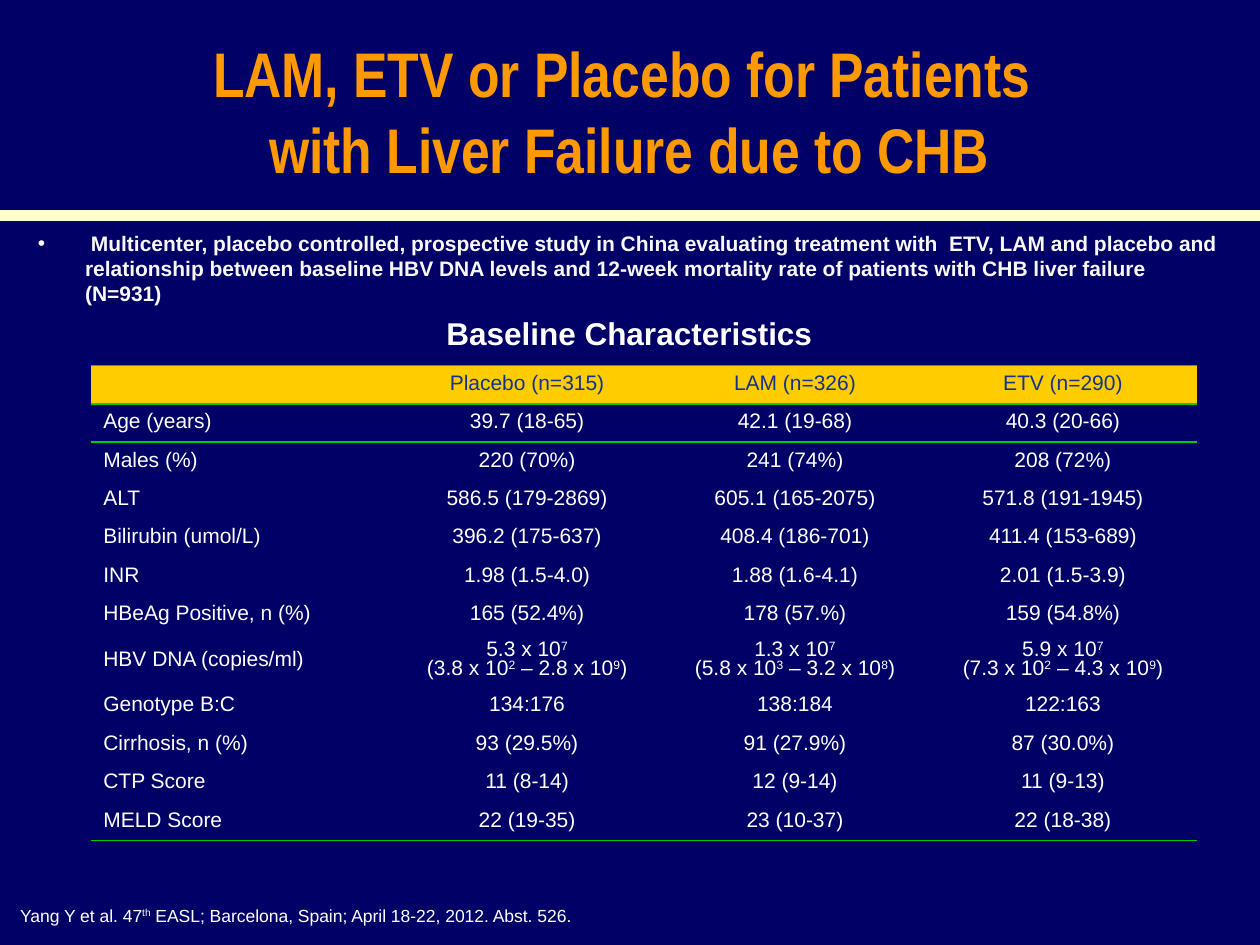
from dataclasses import dataclass

from lxml.etree import SubElement
from pptx import Presentation
from pptx.dml.color import RGBColor as Rgb
from pptx.enum.shapes import MSO_SHAPE as Kind
from pptx.enum.text import MSO_ANCHOR as Anchor, MSO_AUTO_SIZE as Fit, PP_ALIGN as Align
from pptx.oxml import parse_xml
from pptx.oxml.ns import nsdecls, qn
from pptx.util import Inches, Pt


@dataclass(frozen=True)
class Theme:
    back: str = "000066"
    band: str = "FFFFCC"
    title: str = "FF9900"
    body: str = "F8F8F8"
    text: str = "FFFFFF"
    head: str = "16318C"
    gold: str = "FFCC00"
    rule: str = "00CC00"
    font: str = "Arial"
    narrow: str = "Arial Narrow"
    big: int = 36
    mid: int = 18
    small: int = 12
    note: int = 10


@dataclass(frozen=True)
class Box:
    left: float
    top: float
    width: float
    height: float

    def place(self) -> tuple:
        return tuple(Inches(v) for v in (self.left, self.top, self.width, self.height))


@dataclass(frozen=True)
class Row:
    label: str
    cells: tuple
    height: float = 0.305


LOOK = Theme()
ROWS = [
    Row("", ("Placebo (n=315)", "LAM (n=326)", "ETV (n=290)")),
    Row("Age (years)", ("39.7 (18-65)", "42.1 (19-68)", "40.3 (20-66)")),
    Row("Males (%)", ("220 (70%)", "241 (74%)", "208 (72%)")),
    Row("ALT", ("586.5 (179-2869)", "605.1 (165-2075)", "571.8 (191-1945)")),
    Row("Bilirubin (umol/L)", ("396.2 (175-637)", "408.4 (186-701)", "411.4 (153-689)")),
    Row("INR", ("1.98 (1.5-4.0)", "1.88 (1.6-4.1)", "2.01 (1.5-3.9)")),
    Row("HBeAg Positive, n (%)", ("165 (52.4%)", "178 (57.%)", "159 (54.8%)")),
    Row("HBV DNA (copies/ml)", (
        "5.3 x 10^7^\n(3.8 x 10^2^ – 2.8 x 10^9^)",
        "1.3 x 10^7^\n(5.8 x 10^3^ – 3.2 x 10^8^)",
        "5.9 x 10^7^\n(7.3 x 10^2^ – 4.3 x 10^9^)"), 0.42),
    Row("Genotype B:C", ("134:176", "138:184", "122:163")),
    Row("Cirrhosis, n (%)", ("93 (29.5%)", "91 (27.9%)", "87 (30.0%)")),
    Row("CTP Score", ("11 (8-14)", "12 (9-14)", "11 (9-13)")),
    Row("MELD Score", ("22 (19-35)", "23 (10-37)", "22 (18-38)")),
]


def write(frame, text: str, *, size: int = LOOK.small, color: str = LOOK.text,
          font: str = LOOK.font, bold: bool = False, align=None, space=None) -> None:
    for i, line in enumerate(text.split("\n")):
        para = frame.add_paragraph() if i else frame.paragraphs[0]
        para.alignment = align
        para.line_spacing = space
        if not line:
            SubElement(para._p, qn("a:endParaRPr"), sz=str(size * 100))
        for j, part in enumerate(line.split("\v")):
            if j:
                para.add_line_break()
            for k, bit in enumerate(part.split("^")):
                if not bit:
                    continue
                run = para.add_run()
                run.text = bit
                run.font.size = Pt(size)
                run.font.name = font
                run.font.bold = bold
                run.font.color.rgb = Rgb.from_string(color)
                if k % 2:
                    run.font._element.set("baseline", "30000")


def move(shape, box: Box) -> None:
    shape.left, shape.top, shape.width, shape.height = box.place()


def edge(cell, sides: tuple) -> None:
    props = cell._tc.get_or_add_tcPr()
    for i, side in enumerate(sides):
        props.insert(i, parse_xml(
            f'<a:{side} {nsdecls("a")} w="12700"><a:solidFill>'
            f'<a:srgbClr val="{LOOK.rule}"/></a:solidFill></a:{side}>'))


def add_grid(slide, box: Box, rows: list, first: float) -> None:
    cols = 1 + len(rows[0].cells)
    grid = slide.shapes.add_table(len(rows), cols, *box.place()).table
    grid.first_row = grid.horz_banding = False
    style = grid._tbl.tblPr.find(qn("a:tableStyleId"))
    style.text = "{2D5ABB26-0587-4C30-8999-92F81FD0307C}"
    for i, col in enumerate(grid.columns):
        col.width = Inches((box.width - first) / (cols - 1) if i else first)
    for r, row in enumerate(rows):
        grid.rows[r].height = Inches(row.height)
        sides = {0: ("lnT", "lnB"), 1: ("lnT",), len(rows) - 1: ("lnB",)}.get(r, ())
        for c, text in enumerate((row.label, *row.cells)):
            cell = grid.cell(r, c)
            cell.vertical_anchor = Anchor.MIDDLE
            if r:
                cell.fill.background()
            else:
                cell.fill.solid()
                cell.fill.fore_color.rgb = Rgb.from_string(LOOK.gold)
            edge(cell, sides)
            write(cell.text_frame, text, color=LOOK.text if r else LOOK.head,
                  align=Align.CENTER if c else Align.LEFT, space=0.8)


def add_band(slide, box: Box) -> None:
    band = slide.shapes.add_shape(Kind.RECTANGLE, *box.place())
    band.shadow.inherit = False
    band.fill.solid()
    band.fill.fore_color.rgb = band.line.color.rgb = Rgb.from_string(LOOK.band)
    band.line.width = Pt(0.75)


def main() -> None:
    deck = Presentation()
    deck.slide_width, deck.slide_height = Inches(10), Inches(7.5)
    slide = deck.slides.add_slide(deck.slide_layouts[1])
    slide.background.fill.solid()
    slide.background.fill.fore_color.rgb = Rgb.from_string(LOOK.back)
    add_band(slide, Box(0, 1.67, 10, 0.08))

    title = slide.shapes.title
    move(title, Box(0.33, 0.25, 9.33, 1.25))
    title.text_frame.auto_size = Fit.NONE
    title.text_frame.vertical_anchor = Anchor.MIDDLE
    write(title.text_frame, "LAM, ETV or Placebo for Patients \vwith Liver Failure due to CHB",
          size=LOOK.big, color=LOOK.title, font=LOOK.narrow, bold=True, align=Align.CENTER)

    body = slide.placeholders[1]
    move(body, Box(0.2, 1.78, 9.61, 0.95))
    body.text_frame.auto_size = Fit.NONE
    write(body.text_frame,
          " Multicenter, placebo controlled, prospective study in China evaluating "
          "treatment with  ETV, LAM and placebo and relationship between baseline "
          "HBV DNA levels and 12-week mortality rate of patients with CHB liver "
          "failure (N=931)", color=LOOK.body, bold=True)

    add_grid(slide, Box(0.72, 2.9, 8.78, 3.78), ROWS, 2.4)

    cite = slide.shapes.add_textbox(*Box(0.16, 7.13, 9.7, 0.37).place()).text_frame
    cite.word_wrap = True
    cite.margin_left = cite.margin_right = 0
    write(cite, "Yang Y et al. 47^th^ EASL; Barcelona, Spain; April 18-22, 2012. Abst. 526.",
          size=LOOK.note)

    head = slide.shapes.add_textbox(*Box(3.43, 2.44, 3.13, 0.4).place()).text_frame
    head.word_wrap = False
    head.auto_size = Fit.SHAPE_TO_FIT_TEXT
    write(head, "Baseline Characteristics", size=LOOK.mid, bold=True, align=Align.CENTER)

    deck.save("out.pptx")


if __name__ == "__main__":
    main()
